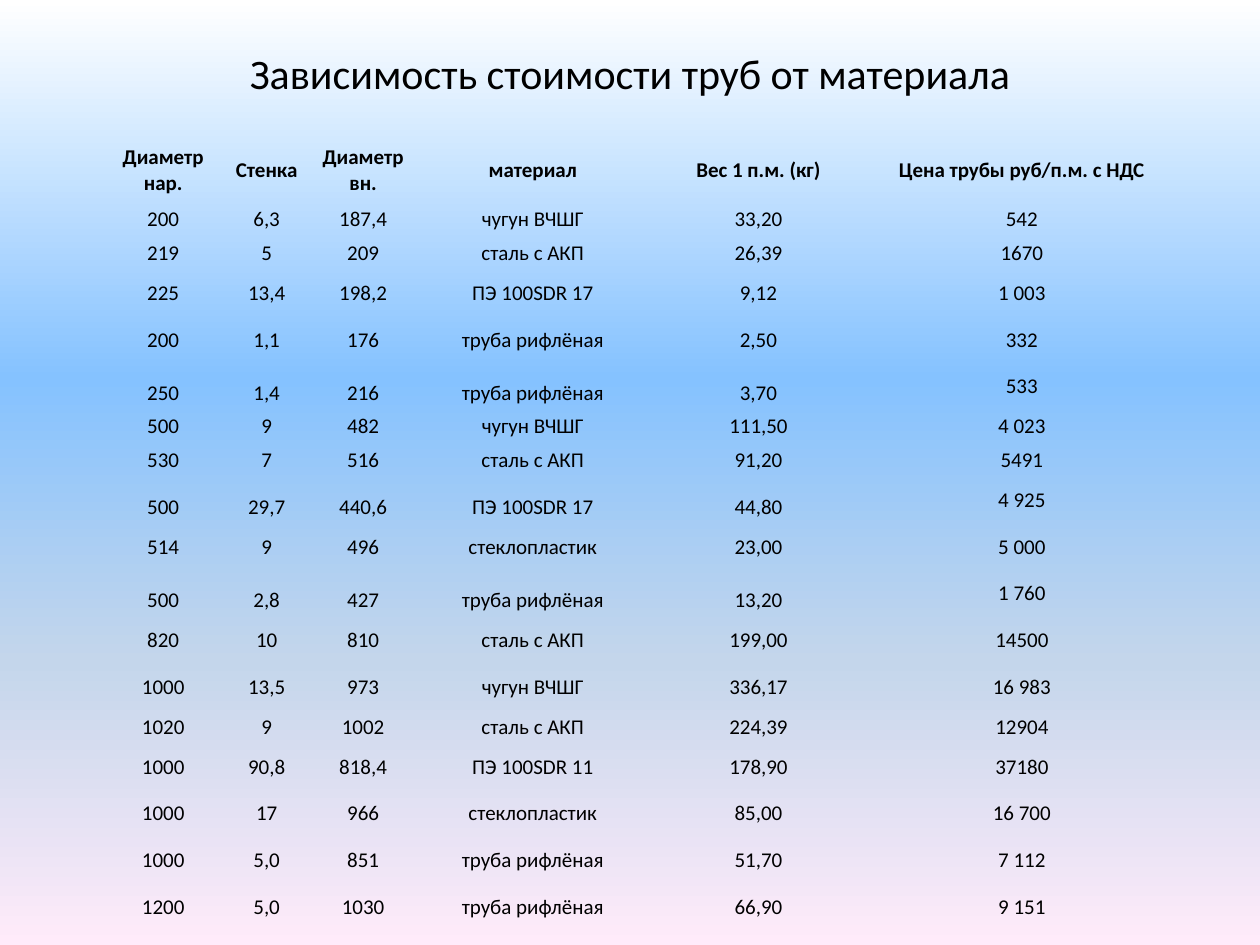
from typing import NamedTuple

from lxml.etree import SubElement
from pptx import Presentation
from pptx.dml.color import RGBColor
from pptx.enum.text import MSO_VERTICAL_ANCHOR as Anchor, PP_PARAGRAPH_ALIGNMENT as Align
from pptx.oxml.ns import qn
from pptx.util import Cm, Pt

FONT = "Calibri"
BLACK = RGBColor(0x00, 0x00, 0x00)
WHITE = RGBColor(0xFF, 0xFF, 0xFF)
SKY = RGBColor(0x85, 0xC2, 0xFF)
MIST = RGBColor(0xC4, 0xD6, 0xEB)
PINK = RGBColor(0xFF, 0xEB, 0xFA)
GRADIENT = ((0, WHITE), (40, SKY), (70, MIST), (100, PINK))

NO_STYLE_NO_GRID = "{2D5ABB26-0587-4C30-8999-92F81FD0307C}"
HEADER_HEIGHT, LOW, TALL = Cm(1.32), Cm(0.67), Cm(0.94)
CELL_MARGIN = Cm(0.08)
COLUMN_WIDTHS = (2.62, 1.55, 2.34, 4.5, 4.6, 6.02)
HEADERS = (
    "Диаметр нар.", "Стенка", "Диаметр вн.",
    "материал", "Вес 1 п.м. (кг)", "Цена трубы руб/п.м. с НДС",
)

IRON = "чугун ВЧШГ"
STEEL = "сталь с АКП"
FIBERGLASS = "стеклопластик"
CORRUGATED = "труба рифлёная"


class Pipe(NamedTuple):
    outer: str
    wall: str
    inner: str
    material: str
    weight: str
    price: str
    height: Cm = TALL
    anchor: Anchor = Anchor.MIDDLE


PIPES = (
    Pipe("200", "6,3", "187,4", IRON, "33,20", "542", LOW, Anchor.BOTTOM),
    Pipe("219", "5", "209", STEEL, "26,39", "1670", LOW),
    Pipe("225", "13,4", "198,2", "ПЭ 100SDR 17", "9,12", "1 003"),
    Pipe("200", "1,1", "176", CORRUGATED, "2,50", "332"),
    Pipe("250", "1,4", "216", CORRUGATED, "3,70", "533", TALL, Anchor.BOTTOM),
    Pipe("500", "9", "482", IRON, "111,50", "4 023", LOW, Anchor.BOTTOM),
    Pipe("530", "7", "516", STEEL, "91,20", "5491", LOW),
    Pipe("500", "29,7", "440,6", "ПЭ 100SDR 17", "44,80", "4 925", TALL, Anchor.BOTTOM),
    Pipe("514", "9", "496", FIBERGLASS, "23,00", "5 000"),
    Pipe("500", "2,8", "427", CORRUGATED, "13,20", "1 760", TALL, Anchor.BOTTOM),
    Pipe("820", "10", "810", STEEL, "199,00", "14500"),
    Pipe("1000", "13,5", "973", IRON, "336,17", "16 983"),
    Pipe("1020", "9", "1002", STEEL, "224,39", "12904", LOW),
    Pipe("1000", "90,8", "818,4", "ПЭ 100SDR 11", "178,90", "37180"),
    Pipe("1000", "17", "966", FIBERGLASS, "85,00", "16 700"),
    Pipe("1000", "5,0", "851", CORRUGATED, "51,70", "7 112"),
    Pipe("1200", "5,0", "1030", CORRUGATED, "66,90", "9 151"),
)


def write_text(text_frame, text: str, size: int, bold: bool = False) -> None:
    paragraph = text_frame.paragraphs[0]
    paragraph.alignment = Align.CENTER
    run = paragraph.add_run()
    run.text = text
    run.font.name = FONT
    run.font.size = Pt(size)
    run.font.bold = bold
    run.font.color.rgb = BLACK


def paint_background(slide) -> None:
    fill = slide.background.fill
    fill.gradient()
    fill.gradient_angle = 270
    stops = slide.element.find(".//" + qn("a:gsLst"))
    for stop in list(stops):
        stops.remove(stop)
    for percent, color in GRADIENT:
        stop = SubElement(stops, qn("a:gs"), pos=str(percent * 1000))
        SubElement(stop, qn("a:srgbClr"), val=str(color))


def add_title(slide, text: str) -> None:
    title = slide.shapes.title
    title.left, title.top = Cm(1.27), Cm(0.76)
    title.width, title.height = Cm(22.86), Cm(1.42)
    title.text_frame.vertical_anchor = Anchor.MIDDLE
    write_text(title.text_frame, text, 24)


def fill_cell(cell, text: str, anchor: Anchor, bold: bool = False) -> None:
    cell.fill.background()
    cell.vertical_anchor = anchor
    cell.margin_left = cell.margin_right = CELL_MARGIN
    cell.margin_top = cell.margin_bottom = CELL_MARGIN
    write_text(cell.text_frame, text, 12, bold)


def add_pipe_table(slide) -> None:
    height = HEADER_HEIGHT + sum(pipe.height for pipe in PIPES)
    frame = slide.shapes.add_table(
        len(PIPES) + 1, len(HEADERS), Cm(1.98), Cm(2.77), Cm(sum(COLUMN_WIDTHS)), height
    )
    frame.element.find(".//" + qn("a:tableStyleId")).text = NO_STYLE_NO_GRID
    table = frame.table
    table.horz_banding = False
    for column, width in zip(table.columns, COLUMN_WIDTHS):
        column.width = Cm(width)

    table.rows[0].height = HEADER_HEIGHT
    for column_index, header in enumerate(HEADERS):
        fill_cell(table.cell(0, column_index), header, Anchor.MIDDLE, bold=True)

    price_column = len(HEADERS) - 1
    for row_index, pipe in enumerate(PIPES, start=1):
        table.rows[row_index].height = pipe.height
        for column_index, text in enumerate(pipe[:len(HEADERS)]):
            anchor = Anchor.MIDDLE if column_index == price_column else pipe.anchor
            fill_cell(table.cell(row_index, column_index), text, anchor)


def main() -> None:
    presentation = Presentation()
    presentation.slide_width, presentation.slide_height = Cm(25.4), Cm(19.05)
    slide = presentation.slides.add_slide(presentation.slide_layouts[5])
    paint_background(slide)
    add_title(slide, "Зависимость стоимости труб от материала")
    add_pipe_table(slide)
    presentation.save("out.pptx")


if __name__ == "__main__":
    main()
